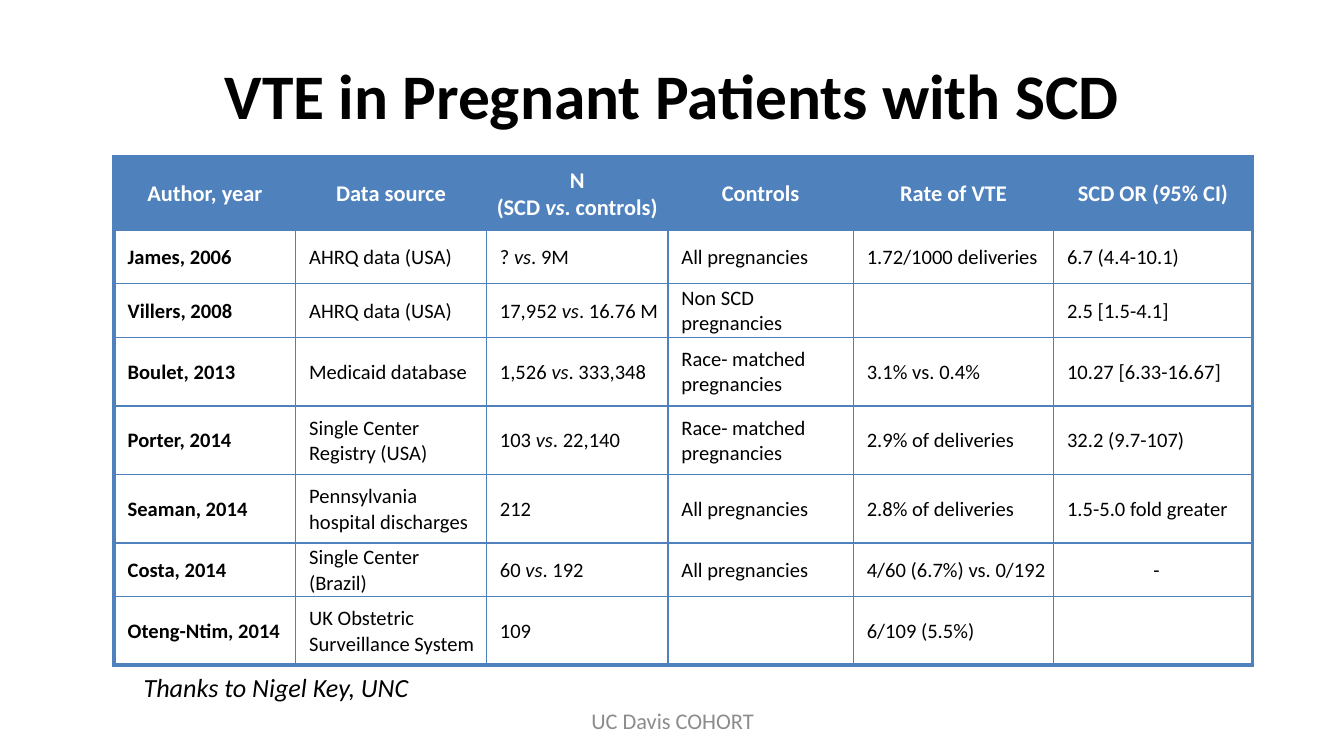
from lxml.etree import SubElement
from pptx import Presentation
from pptx.dml.color import RGBColor
from pptx.enum.text import MSO_ANCHOR, MSO_AUTO_SIZE, PP_ALIGN
from pptx.oxml.ns import qn
from pptx.util import Inches, Pt

BLUE = RGBColor(0x4F, 0x81, 0xBD)
BLACK = RGBColor(0, 0, 0)
WHITE = RGBColor(0xFF, 0xFF, 0xFF)
GRAY = RGBColor(0x8C, 0x8C, 0x8C)
FONT = "Calibri"

COLUMN_WIDTHS = [1.35, 1.42, 1.35, 1.38, 1.49, 1.48]
ROW_HEIGHTS = [0.54, 0.4, 0.4, 0.51, 0.51, 0.51, 0.4, 0.51]
STUDIES = [
    ["Author, year", "Data source", "N\n(SCD *vs*. controls)", "Controls",
     "Rate of VTE", "SCD OR (95% CI)"],
    ["James, 2006", "AHRQ data (USA)", "? *vs*. 9M", "All pregnancies",
     "1.72/1000 deliveries", "6.7 (4.4-10.1)"],
    ["Villers, 2008", "AHRQ data (USA)", "17,952 *vs*. 16.76 M",
     "Non SCD pregnancies", "", "2.5 [1.5-4.1]"],
    ["Boulet, 2013", "Medicaid database", "1,526 *vs*. 333,348",
     "Race- matched\npregnancies", "3.1% vs. 0.4%", "10.27 [6.33-16.67]"],
    ["Porter, 2014", "Single Center  Registry (USA)", "103 *vs*. 22,140",
     "Race- matched\npregnancies", "2.9% of deliveries", "32.2 (9.7-107)"],
    ["Seaman, 2014", "Pennsylvania hospital discharges", "212",
     "All pregnancies", "2.8% of deliveries", "1.5-5.0 fold greater"],
    ["Costa, 2014", "Single Center (Brazil)", "60 *vs*. 192",
     "All pregnancies", "4/60 (6.7%) vs. 0/192", "-"],
    ["Oteng-Ntim, 2014", "UK Obstetric Surveillance System", "109", "",
     "6/109 (5.5%)", ""],
]


def write_text(frame, text, size, color, bold=False, italic=False, align=PP_ALIGN.LEFT):
    """Write one paragraph per line, with starred words in italics."""
    for line_number, line in enumerate(text.split("\n")):
        paragraph = frame.add_paragraph() if line_number else frame.paragraphs[0]
        paragraph.alignment = align
        paragraph.font.size = Pt(size)
        for part_number, part in enumerate(line.split("*")):
            if not part:
                continue
            run = paragraph.add_run()
            run.text = part
            run.font.name = FONT
            run.font.size = Pt(size)
            run.font.bold = bold
            run.font.italic = italic or part_number % 2 == 1
            run.font.color.rgb = color


def add_title(slide, text):
    """Place and fill the title placeholder."""
    title = slide.shapes.title
    title.left, title.top = Inches(0.5), Inches(0.23)
    title.width, title.height = Inches(9), Inches(0.94)
    title.text_frame.vertical_anchor = MSO_ANCHOR.MIDDLE
    write_text(title.text_frame, text, 34, BLACK, bold=True, align=PP_ALIGN.CENTER)


def add_label(slide, bounds, text, size, color, wrap=True, **style):
    """Add a text box, which grows to fit when it does not wrap."""
    frame = slide.shapes.add_textbox(*map(Inches, bounds)).text_frame
    frame.word_wrap = wrap
    if wrap:
        frame.vertical_anchor = MSO_ANCHOR.MIDDLE
    else:
        frame.auto_size = MSO_AUTO_SIZE.SHAPE_TO_FIT_TEXT
    write_text(frame, text, size, color, **style)


def set_borders(cell, widths):
    """Draw the left, right, top and bottom borders in the given points."""
    properties = cell._tc.get_or_add_tcPr()
    for position, (side, width) in enumerate(zip("LRTB", widths)):
        line = SubElement(properties, qn(f"a:ln{side}"), w=str(Pt(width)))
        fill = SubElement(line, qn("a:solidFill"))
        SubElement(fill, qn("a:srgbClr"), val=str(BLUE))
        properties.insert(position, line)


def format_cell(cell, text, is_header, is_author):
    """Fill a study cell with its text, margins and background."""
    cell.vertical_anchor = MSO_ANCHOR.MIDDLE
    cell.margin_left = Inches(0.01 if is_header else 0.1)
    cell.margin_right = Inches(0.01 if is_header else 0.05)
    cell.margin_top, cell.margin_bottom = Inches(0.01), 0
    if is_header:
        cell.fill.solid()
        cell.fill.fore_color.rgb = BLUE
    else:
        cell.fill.background()
    centered = is_header or text == "-"
    write_text(cell.text_frame, text, 12 if is_header else 11,
               WHITE if is_header else BLACK, bold=is_header or is_author,
               align=PP_ALIGN.CENTER if centered else PP_ALIGN.LEFT)


def add_study_table(slide):
    """Add the table of studies with a heavier outer frame."""
    last_row, last_column = len(ROW_HEIGHTS) - 1, len(COLUMN_WIDTHS) - 1
    table = slide.shapes.add_table(
        len(ROW_HEIGHTS), len(COLUMN_WIDTHS), Inches(0.85), Inches(1.17),
        Inches(sum(COLUMN_WIDTHS)), Inches(sum(ROW_HEIGHTS))).table
    table.horz_banding = False
    for column, width in zip(table.columns, COLUMN_WIDTHS):
        column.width = Inches(width)
    for row, height in zip(table.rows, ROW_HEIGHTS):
        row.height = Inches(height)
    for r, study in enumerate(STUDIES):
        for c, text in enumerate(study):
            cell = table.cell(r, c)
            format_cell(cell, text, r == 0, c == 0)
            outer = (c == 0, c == last_column, r == 0, r == last_row)
            set_borders(cell, [2.25 if edge else 1 for edge in outer])


def main():
    """Build and save the slide."""
    presentation = Presentation()
    presentation.slide_width = Inches(10)
    presentation.slide_height = Inches(10 * 9 / 16)
    slide = presentation.slides.add_slide(presentation.slide_layouts[5])
    add_title(slide, "VTE in Pregnant Patients with SCD")
    add_label(slide, (3.42, 5.21, 3.17, 0.3), "UC Davis COHORT", 12, GRAY,
              align=PP_ALIGN.CENTER)
    add_label(slide, (0.97, 4.95, 2.26, 0.34), "Thanks to Nigel Key, UNC", 14, BLACK,
              wrap=False, italic=True)
    add_study_table(slide)
    presentation.save("out.pptx")


if __name__ == "__main__":
    main()
